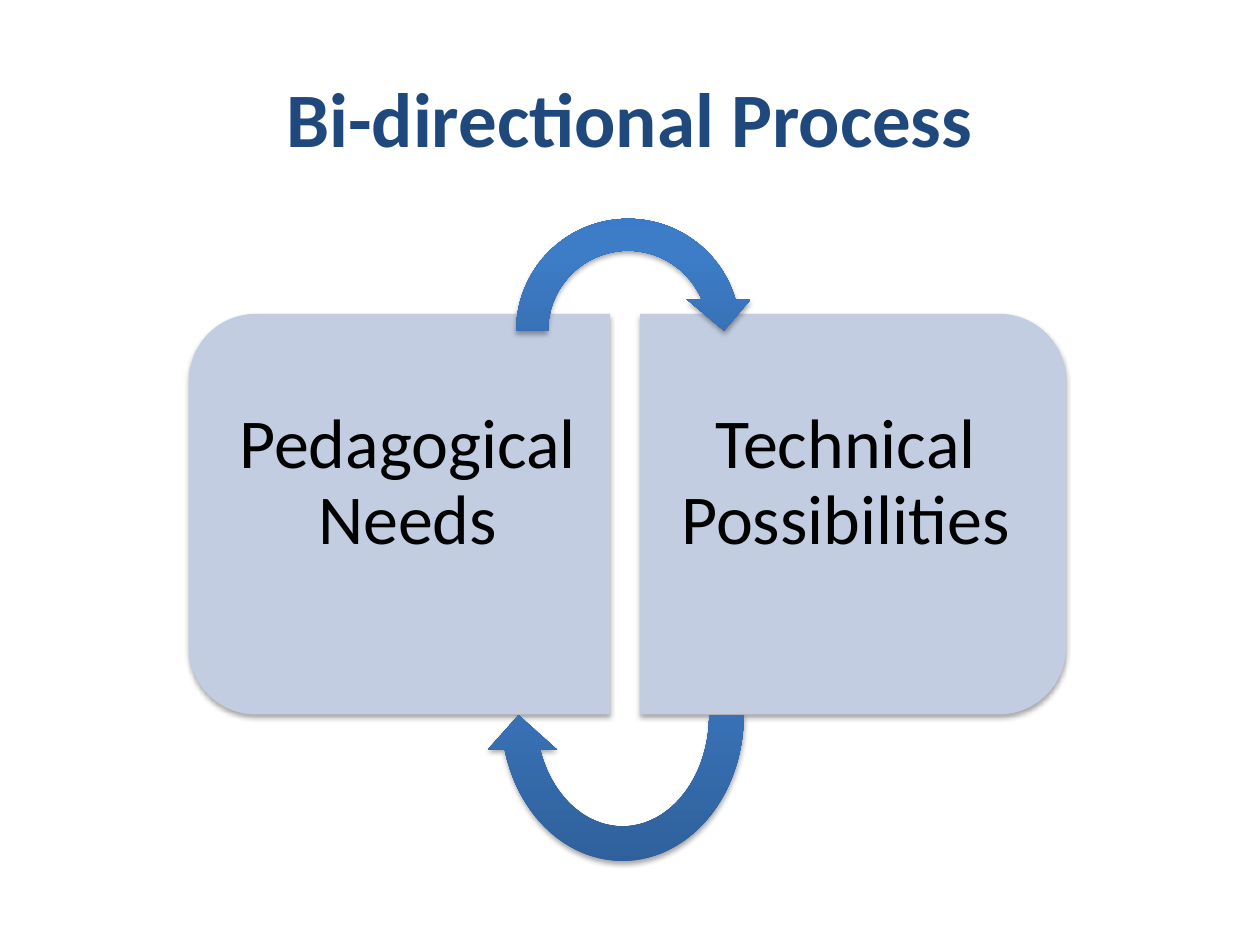
from pptx import Presentation
from pptx.dml.color import RGBColor
from pptx.enum.shapes import MSO_SHAPE
from pptx.enum.text import MSO_ANCHOR, PP_ALIGN
from pptx.oxml import parse_xml
from pptx.oxml.ns import nsdecls
from pptx.util import Inches, Pt

PANEL, ARROW = MSO_SHAPE.ROUND_2_SAME_RECTANGLE, MSO_SHAPE.CIRCULAR_ARROW
TOP, MIDDLE, CENTER = MSO_ANCHOR.TOP, MSO_ANCHOR.MIDDLE, PP_ALIGN.CENTER

# Content: boxes are left, top, width, height in inches
TITLE = ("Bi-directional Process", (0.5, 0.3, 9, 1.25))
PANELS = [
    dict(text="Pedagogical Needs", box=(1.5, 2.49, 3.34, 3.18), rotation=270,
         text_box=(1.66, 2.65, 3.19, 2.87), insets=(0.08, 0.59, 0.12, 0.14)),
    dict(text="Technical Possibilities", box=(5.08, 2.49, 3.38, 3.18), rotation=90,
         text_box=(5.08, 2.65, 3.22, 2.87), insets=(0.12, 0.59, 0.08, 0.14)),
]
ARROWS = [((3.97, 1.61, 2.03, 2.03), 0), ((3.84, 4.38, 2.2, 2.59), 180)]

THEME = dict(
    font="Calibri", title_size=44, label_size=40,
    title="1F497D", label="000000", panel="C2CDE1", shadow="000000",
    arrow=[(0, "2F5F99"), (80, "3D7CC7"), (100, "3A7CCB")],
)


def add_text(s, text, box, *, size, color, bold=False, anchor=TOP,
             insets=(0.1, 0.05, 0.1, 0.05), spacing=1.0):
    tf = s.shapes.add_textbox(*map(Inches, box)).text_frame
    tf.word_wrap = True
    tf.vertical_anchor = anchor
    tf.margin_left, tf.margin_top, tf.margin_right, tf.margin_bottom = map(Inches, insets)
    p = tf.paragraphs[0]
    p.alignment = CENTER
    p.line_spacing = spacing
    r = p.add_run()
    r.text = text
    r.font.name = THEME["font"]
    r.font.size = Pt(size)
    r.font.bold = bold
    r.font.color.rgb = RGBColor.from_string(color)


def add_shape(s, kind, box, rotation):
    sp = s.shapes.add_shape(kind, *map(Inches, box))
    sp.rotation = rotation
    sp.line.fill.background()
    # Soft shadow straight below
    sp._element.spPr.append(parse_xml(
        f'<a:effectLst {nsdecls("a")}><a:outerShdw blurRad="{Pt(3.1)}" dist="{Pt(1.8)}" '
        f'dir="5400000" rotWithShape="0"><a:srgbClr val="{THEME["shadow"]}">'
        '<a:alpha val="35000"/></a:srgbClr></a:outerShdw></a:effectLst>'))
    return sp


def add_panel(s, box, rotation):
    # The preset is turned a quarter, so width and height swap about the centre
    x, y, w, h = box
    turned = (x + (w - h) / 2, y + (h - w) / 2, h, w)
    sp = add_shape(s, PANEL, turned, rotation)
    sp.adjustments[0] = 0.167
    sp.fill.solid()
    sp.fill.fore_color.rgb = RGBColor.from_string(THEME["panel"])


def add_arrow(s, box, rotation):
    sp = add_shape(s, ARROW, box, rotation)
    stops = "".join(f'<a:gs pos="{pos * 1000}"><a:srgbClr val="{color}"/></a:gs>'
                    for pos, color in THEME["arrow"])
    # Three stops running upwards, whatever the rotation
    sp._element.spPr.find("{*}prstGeom").addnext(parse_xml(
        f'<a:gradFill {nsdecls("a")} rotWithShape="0"><a:gsLst>{stops}</a:gsLst>'
        '<a:lin ang="16200000" scaled="0"/></a:gradFill>'))


def main():
    prs = Presentation()
    prs.slide_width, prs.slide_height = Inches(10), Inches(7.5)
    s = prs.slides.add_slide(prs.slide_layouts[6])

    # Title
    add_text(s, *TITLE, size=THEME["title_size"], color=THEME["title"],
             bold=True, anchor=MIDDLE)

    # Panels with their labels
    for panel in PANELS:
        add_panel(s, panel["box"], panel["rotation"])
        add_text(s, panel["text"], panel["text_box"], size=THEME["label_size"],
                 color=THEME["label"], insets=panel["insets"], spacing=0.9)

    # Arrows between the panels
    for box, rotation in ARROWS:
        add_arrow(s, box, rotation)

    prs.save("out.pptx")


if __name__ == "__main__":
    main()
